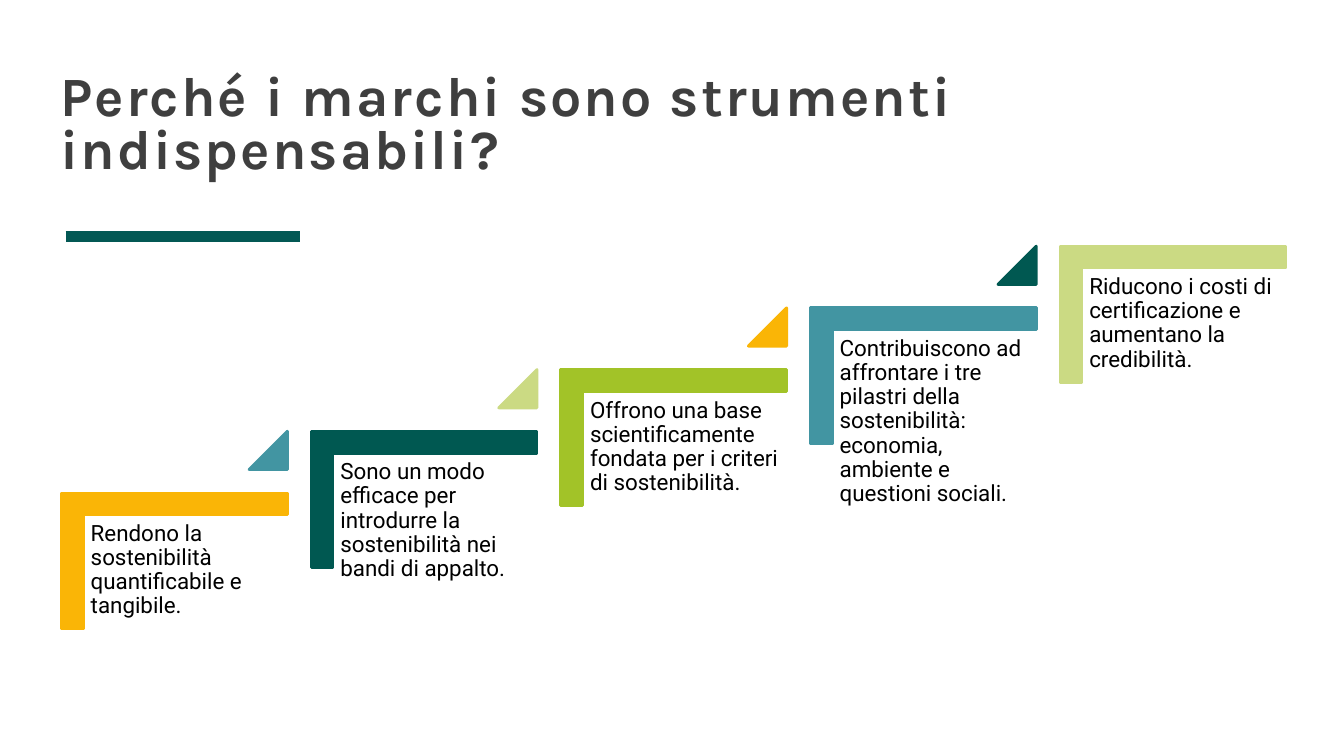
import pptx
import pptx.dml.color
import pptx.enum.shapes
import pptx.enum.text
import pptx.util
from lxml import etree

Inches = pptx.util.Inches
Pt = pptx.util.Pt
RGBColor = pptx.dml.color.RGBColor
Shape = pptx.enum.shapes.MSO_SHAPE
Anchor = pptx.enum.text.MSO_ANCHOR

WHITE = RGBColor(0xFF, 0xFF, 0xFF)
BLACK = RGBColor(0x00, 0x00, 0x00)
CHARCOAL = RGBColor(0x3F, 0x3F, 0x3F)
PINE = RGBColor(0x03, 0x58, 0x54)
AMBER = RGBColor(0xFA, 0xB5, 0x06)
TEAL = RGBColor(0x42, 0x95, 0xA2)
FOREST = RGBColor(0x00, 0x58, 0x51)
LIME = RGBColor(0xCB, 0xDA, 0x83)
GREEN = RGBColor(0xA2, 0xC3, 0x28)

TITLE = "Perché i marchi sono strumenti indispensabili?"
# Step text, bracket colour, colour of the triangle leading to the next step
STEPS = [
    ("Rendono la sostenibilità quantificabile e tangibile.", AMBER, TEAL),
    ("Sono un modo efficace per introdurre la sostenibilità nei bandi di appalto.", FOREST, LIME),
    ("Offrono una base scientificamente fondata per i criteri di sostenibilità.", GREEN, AMBER),
    ("Contribuiscono ad affrontare i tre pilastri della sostenibilità: "
     "economia, ambiente e questioni sociali.", TEAL, FOREST),
    ("Riducono i costi di certificazione e aumentano la credibilità.", LIME, None),
]
FIRST_LEFT, FIRST_TOP = 0.61, 4.89
STEP_RUN, STEP_RISE = 2.476, 0.612
BRACKET_WIDTH, BRACKET_HEIGHT = 2.24, 1.35
TEXT_INSET = 0.22
TRIANGLE_SIZE = 0.38


def format_text(frame, margin, line_spacing, font_name, size, color, bold=False):
    frame.word_wrap = True
    frame.auto_size = pptx.enum.text.MSO_AUTO_SIZE.NONE
    frame.margin_left = frame.margin_right = Inches(margin)
    frame.margin_top = frame.margin_bottom = Inches(margin)
    para = frame.paragraphs[0]
    para.alignment = pptx.enum.text.PP_ALIGN.LEFT
    para.line_spacing = line_spacing
    para.space_before = Pt(0)
    font = para.runs[0].font
    font.name, font.size, font.bold = font_name, Pt(size), bold
    font.color.rgb = color


def add_heading(page, left, top, width, height):
    title = page.shapes.title
    title.left, title.top = Inches(left), Inches(top)
    title.width, title.height = Inches(width), Inches(height)
    frame = title.text_frame
    frame.text = TITLE
    format_text(frame, 0, 0.8, "Karla", 39.6, CHARCOAL, bold=True)
    frame.vertical_anchor = Anchor.MIDDLE
    frame.paragraphs[0].runs[0].font._element.set("spc", "150")

    rule_top = Inches(top + 1.59)
    rule = page.shapes.add_connector(
        pptx.enum.shapes.MSO_CONNECTOR.STRAIGHT,
        Inches(left + 0.05), rule_top, Inches(left + 2.38), rule_top)
    rule.line.color.rgb = PINE
    rule.line.width = Pt(8)
    etree.SubElement(rule._element.spPr, pptx.oxml.ns.qn("a:effectLst"))


def add_solid(page, kind, left, top, width, height, color):
    shape = page.shapes.add_shape(
        kind, Inches(left), Inches(top), Inches(width), Inches(height))
    shape.shadow.inherit = False
    shape.fill.solid()
    shape.fill.fore_color.rgb = color
    shape.line.color.rgb = color
    shape.line.width = Pt(2)
    return shape


def add_step(page, left, top, text, color, next_color):
    # The corner shape is laid out upright, then turned about its centre
    turn = (BRACKET_WIDTH - BRACKET_HEIGHT) / 2
    bracket = add_solid(page, Shape.CORNER, left + turn, top - turn,
                        BRACKET_HEIGHT, BRACKET_WIDTH, color)
    bracket.rotation = 90
    bracket.adjustments[0] = bracket.adjustments[1] = 0.161

    box = page.shapes.add_textbox(
        Inches(left + TEXT_INSET), Inches(top + TEXT_INSET),
        Inches(BRACKET_WIDTH - TEXT_INSET), Inches(1.77))
    box.text_frame.text = text
    format_text(box.text_frame, 0.07, 0.9, "Roboto", 16, BLACK)

    if next_color is not None:
        triangle = add_solid(
            page, Shape.ISOSCELES_TRIANGLE, left + BRACKET_WIDTH - TRIANGLE_SIZE,
            top - STEP_RISE, TRIANGLE_SIZE, TRIANGLE_SIZE, next_color)
        triangle.adjustments[0] = 1


def add_staircase(page, left, top):
    for index, step in enumerate(STEPS):
        add_step(page, left + index * STEP_RUN, top - index * STEP_RISE, *step)


def main():
    deck = pptx.Presentation()
    deck.slide_width, deck.slide_height = Inches(13.33), Inches(7.5)
    page = deck.slides.add_slide(deck.slide_layouts[5])
    page.background.fill.solid()
    page.background.fill.fore_color.rgb = WHITE
    add_heading(page, 0.6, 0.76, 12.03, 1)
    add_staircase(page, FIRST_LEFT, FIRST_TOP)
    deck.save("out.pptx")


if __name__ == "__main__":
    main()
